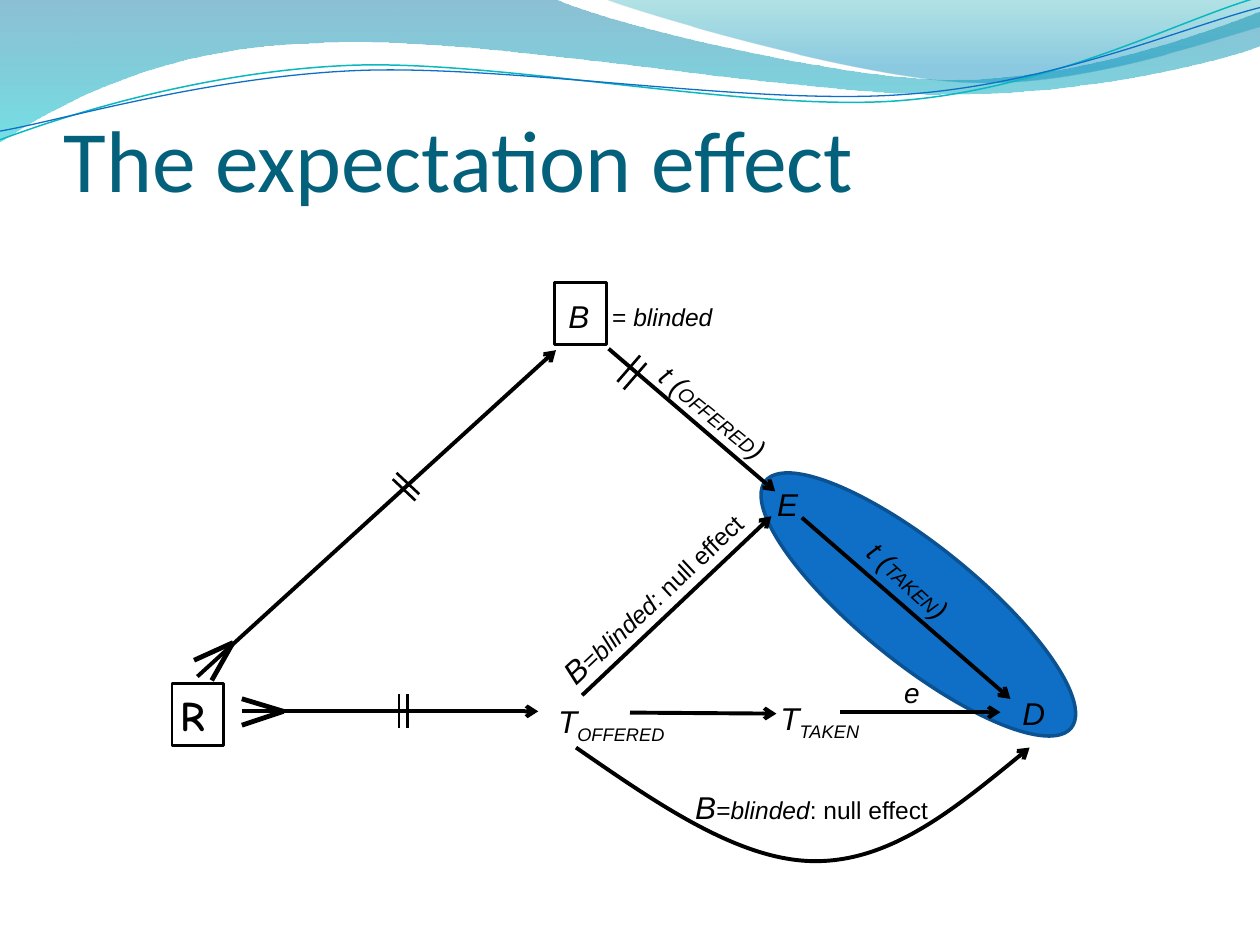
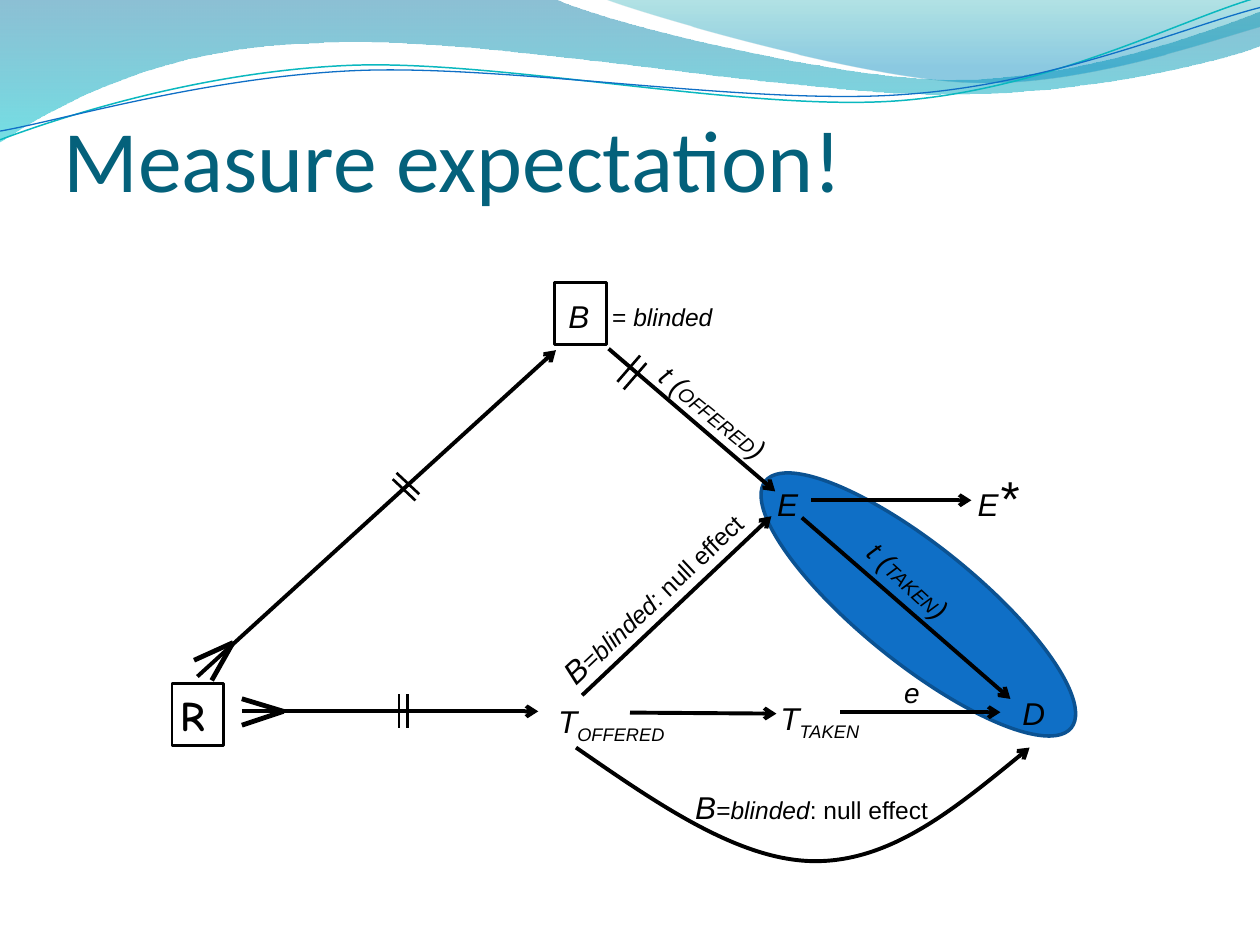
from pptx import Presentation
from pptx.dml.color import RGBColor
from pptx.enum.shapes import MSO_CONNECTOR, MSO_SHAPE
from pptx.enum.text import MSO_ANCHOR, MSO_AUTO_SIZE
from pptx.oxml.ns import qn
from pptx.util import Pt
from lxml import etree

ELLIPSE, RECTANGLE = MSO_SHAPE.OVAL, MSO_SHAPE.RECTANGLE
STRAIGHT = MSO_CONNECTOR.STRAIGHT
BOTTOM = MSO_ANCHOR.BOTTOM
GROW, FIXED = MSO_AUTO_SIZE.SHAPE_TO_FIT_TEXT, MSO_AUTO_SIZE.NONE

COLORS = {
    "ink": "000000", "title": "04617B", "pathway": "0F6FC6", "pathway_edge": "0B5292",
    "teal_line": "0AB8BF", "blue_line": "0F6FC6",
    "wave_blue": "0074A1", "wave_cyan": "00C6CF", "crest_teal": "00A1A9", "crest_blue": "008BBF",
}
BODY_FONT, TITLE_FONT, HAND_FONT = "Arial", "Calibri", "Comic Neue"
ARROW_WIDTH, FORK_WIDTH, TICK_WIDTH = 2.25, 2.75, 1.5
UNITS_PER_POINT = 100

WAVE = [[(0, 0)], [(316.8, -0.7)],
        [(342.7, 12.2), (478.1, 45.4), (545.8, 45.4)],
        [(614.2, 45.4), (689.8, 18.7), (720, 6.5)], [(720.7, 25.9)],
        [(707.8, 31.7), (626.4, 54.7), (537.1, 54)],
        [(447.8, 54), (275, 20.2), (185, 24.5)],
        [(92.2, 25.9), (33.1, 59.8), (-0.7, 81.4)]]
CREST = [[(344.9, -0.7)],
         [(366.5, 7.9), (491, 44.6), (553.7, 46.8)],
         [(616.3, 49.7), (691.9, 23), (720, 15.1)], [(720, 0)]]
TEAL_LINE = [[(0, 79.9)],
             [(34.6, 67), (113.8, 41), (199.4, 37.4)],
             [(284.4, 33.8), (427, 64.1), (513.4, 57.6)],
             [(599.8, 51.1), (675.4, 10.8), (718.6, -1.4)]]
BLUE_LINE = [[(0, 74.9)],
             [(33.8, 69.1), (118.1, 43.9), (203.8, 40.3)],
             [(290.2, 36.7), (429.8, 60.5), (516.2, 54)],
             [(601.9, 48.2), (677.5, 15.1), (720, 4.3)]]
DIRECT_EFFECT = [[(233.2, 267.2)],
                 [(280, 299.6), (326.8, 332.1), (370, 332.1)],
                 [(413.2, 332.1), (452.8, 299.6), (492.4, 267.2)]]

NULL_EFFECT = [("B", 18, "i"), ("=", 14, ""), ("blinded", 14, "i"), (": null effect", 14, "")]


def rgb(name):
    return RGBColor.from_string(COLORS[name])


def set_line(line, color, width, arrow=False):
    line.color.rgb = rgb(color)
    line.width = Pt(width)
    if arrow:
        etree.SubElement(line._get_or_add_ln(), qn("a:tailEnd"), type="arrow")


def bend_segments(shape, segments):
    left = min(segment[-1][0] for segment in segments)
    top = min(segment[-1][1] for segment in segments)
    straights = list(shape._element.iter(qn("a:lnTo")))
    for straight, segment in zip(straights, segments[1:]):
        if len(segment) == 3:
            bend = etree.Element(qn("a:cubicBezTo"))
            for x, y in segment:
                etree.SubElement(bend, qn("a:pt"), x=str(round(x - left)), y=str(round(y - top)))
            straight.getparent().replace(straight, bend)


class Region:
    def __init__(self, slide, left, top):
        self.shapes, self.left, self.top = slide.shapes, left, top

    def at(self, x, y):
        return Pt(self.left + x), Pt(self.top + y)

    def text(self, box, runs, rotation=0, wrap=True, font=BODY_FONT, color="ink"):
        x, y, width, height = box
        label = self.shapes.add_textbox(*self.at(x, y), Pt(width), Pt(height))
        label.rotation = rotation
        frame = label.text_frame
        frame.word_wrap = wrap
        frame.auto_size = GROW
        for content, size, style in runs:
            run = frame.paragraphs[0].add_run()
            run.text = content
            run.font.name, run.font.size = font, Pt(size)
            run.font.color.rgb = rgb(color)
            run.font.italic = "i" in style
            run.font.bold = "b" in style
            if "s" in style:
                run.font._element.set("cap", "small")
            if "_" in style:
                run.font._element.set("baseline", "-25000")
        return frame

    def line(self, start, end, width=ARROW_WIDTH, arrow=False):
        link = self.shapes.add_connector(STRAIGHT, *self.at(*start), *self.at(*end))
        set_line(link.line, "ink", width, arrow)
        etree.SubElement(link._element.spPr, qn("a:effectLst"))

    def fork(self, tip, prongs):
        for prong in prongs:
            self.line(tip, prong, FORK_WIDTH)

    def ticks(self, start, end, shift):
        for k in (0, 1):
            dx, dy = k * shift[0], k * shift[1]
            self.line((start[0] + dx, start[1] + dy), (end[0] + dx, end[1] + dy), TICK_WIDTH)

    def preset(self, kind, box, line, width, fill=None, rotation=0):
        x, y, w, h = box
        shape = self.shapes.add_shape(kind, *self.at(x, y), Pt(w), Pt(h))
        shape.shadow.inherit = False
        shape.rotation = rotation
        if fill:
            shape.fill.solid()
            shape.fill.fore_color.rgb = rgb(fill)
        else:
            shape.fill.background()
        set_line(shape.line, line, width)

    def outline(self, steps, close=False):
        segments = [[((self.left + x) * UNITS_PER_POINT, (self.top + y) * UNITS_PER_POINT)
                     for x, y in step] for step in steps]
        ends = [segment[-1] for segment in segments]
        builder = self.shapes.build_freeform(*ends[0], scale=Pt(1) / UNITS_PER_POINT)
        builder.add_line_segments(ends[1:], close=close)
        shape = builder.convert_to_shape()
        shape.shadow.inherit = False
        bend_segments(shape, segments)
        return shape

    def curve(self, steps, color, width, arrow=False):
        shape = self.outline(steps)
        shape.fill.background()
        set_line(shape.line, color, width, arrow)

    def band(self, steps, stops):
        shape = self.outline(steps, close=True)
        shape.line.fill.background()
        shape.fill.gradient()
        shape.fill.gradient_angle = 270
        for stop, (position, color, _) in zip(shape.fill.gradient_stops, stops):
            stop.position = position
            stop.color.rgb = rgb(color)
        for tone, (_, _, opacity) in zip(shape._element.iter(qn("a:srgbClr")), stops):
            etree.SubElement(tone, qn("a:alpha"), val=str(opacity * 1000))


def draw_waves(slide, left, top):
    waves = Region(slide, left, top)
    waves.band(WAVE, [(0, "wave_blue", 45), (1, "wave_cyan", 55)])
    waves.band(CREST, [(0, "crest_teal", 30), (0.8, "crest_blue", 45)])
    waves.curve(TEAL_LINE, "teal_line", 0.85)
    waves.curve(BLUE_LINE, "blue_line", 0.75)


def draw_title(slide, left, top, title):
    frame = Region(slide, left, top).text((0, 0, 654, 90), [(title, 50, "")],
                                          font=TITLE_FONT, color="title")
    frame.auto_size = FIXED
    frame.vertical_anchor = BOTTOM
    frame.margin_left = frame.margin_right = frame.margin_bottom = 0
    frame.margin_top = Pt(3.6)


def draw_causal_diagram(slide, left, top):
    diagram = Region(slide, left, top)
    diagram.preset(ELLIPSE, (395.3, 73.1, 67, 224.6), "pathway_edge", 2, "pathway", 308.9)

    for box, runs in [
        ((215.8, 237.5, 90, 28.8), [("T", 18, "i"), ("OFFERED", 18, "i_")]),
        ((342.9, 236, 75.6, 28.8), [("T", 18, "i"), ("TAKEN", 18, "i_")]),
        ((481.2, 233.1, 28.8, 31.7), [("D", 18, "i")]),
        ((341, 113.6, 28.8, 28.8), [("E", 18, "i")]),
        ((221.7, 6.3, 29.5, 28.8), [("B", 18, "i")]),
        ((294.2, 286.7, 159.1, 28.8), NULL_EFFECT),
    ]:
        diagram.text(box, runs)
    diagram.text((0, 230.2, 38.9, 36.7), [("R", 24, "b")], font=HAND_FONT)
    diagram.text((200.6, 161.1, 164.2, 28.8), NULL_EFFECT, 316.62)
    for box, rotation, treatment in [((387.8, 159, 71.3, 26.6), 42.5, "taken"),
                                     ((267.8, 63.2, 88.6, 26.6), 39.3, "offered")]:
        runs = [("t (", 16, "i"), (treatment, 14, "is"), (")", 16, "i")]
        diagram.text(box, runs, rotation, wrap=False)
    diagram.text((413.6, 222.3, 23.8, 26.6), [("e", 16, "i")], wrap=False)
    diagram.text((246.7, 8.8, 72, 24.5), [("= ", 14, ""), ("blinded", 14, "i")], wrap=False)

    for x, y in [(220.9, 1.4), (2.2, 230.6)]:
        diagram.preset(RECTANGLE, (x, y, 29.5, 35.6), "ink", TICK_WIDTH)

    for start, end in [
        ((362.2, 135.8), (481.4, 239.4)),
        ((251.8, 39.3), (347, 120.8)),
        ((236.7, 237.3), (344.8, 135)),
        ((16.8, 226.6), (221.7, 40.1)),
        ((42.2, 246.5), (211.6, 246.5)),
        ((264, 247.2), (347.7, 247.8)),
        ((384.2, 247), (475.7, 247)),
    ]:
        diagram.line(start, end, arrow=True)
    diagram.fork((37.2, 207.2), [(25, 228.8), (14.9, 217.3)])
    diagram.fork((66, 246.5), [(42.2, 254.4), (42.2, 239.3)])
    diagram.ticks((132, 236.7), (132, 256.2), (4.7, 0))
    diagram.ticks((273.4, 47.5), (260.4, 62.5), (-3.6, -4.3))
    diagram.ticks((141.4, 126), (128.4, 113.8), (2.2, -3.6))
    diagram.curve(DIRECT_EFFECT, "ink", ARROW_WIDTH, arrow=True)


def draw_measured_expectation(slide, left, top):
    measure = Region(slide, left, top)
    measure.line((0, 22.4), (91.4, 22.4), arrow=True)
    measure.text((87.8, 0, 39.6, 41), [("E", 18, "i"), ("*", 28, "i")])


def main():
    deck = Presentation()
    deck.slide_width, deck.slide_height = Pt(720), Pt(540)
    for title, measured in [("The expectation effect", False), ("Measure expectation!", True)]:
        slide = deck.slides.add_slide(deck.slide_layouts[6])
        draw_waves(slide, 0, 0)
        draw_title(slide, 36.3, 30, title)
        draw_causal_diagram(slide, 96, 160)
        if measured:
            draw_measured_expectation(slide, 463.7, 263.5)
    deck.save("out.pptx")


if __name__ == "__main__":
    main()
